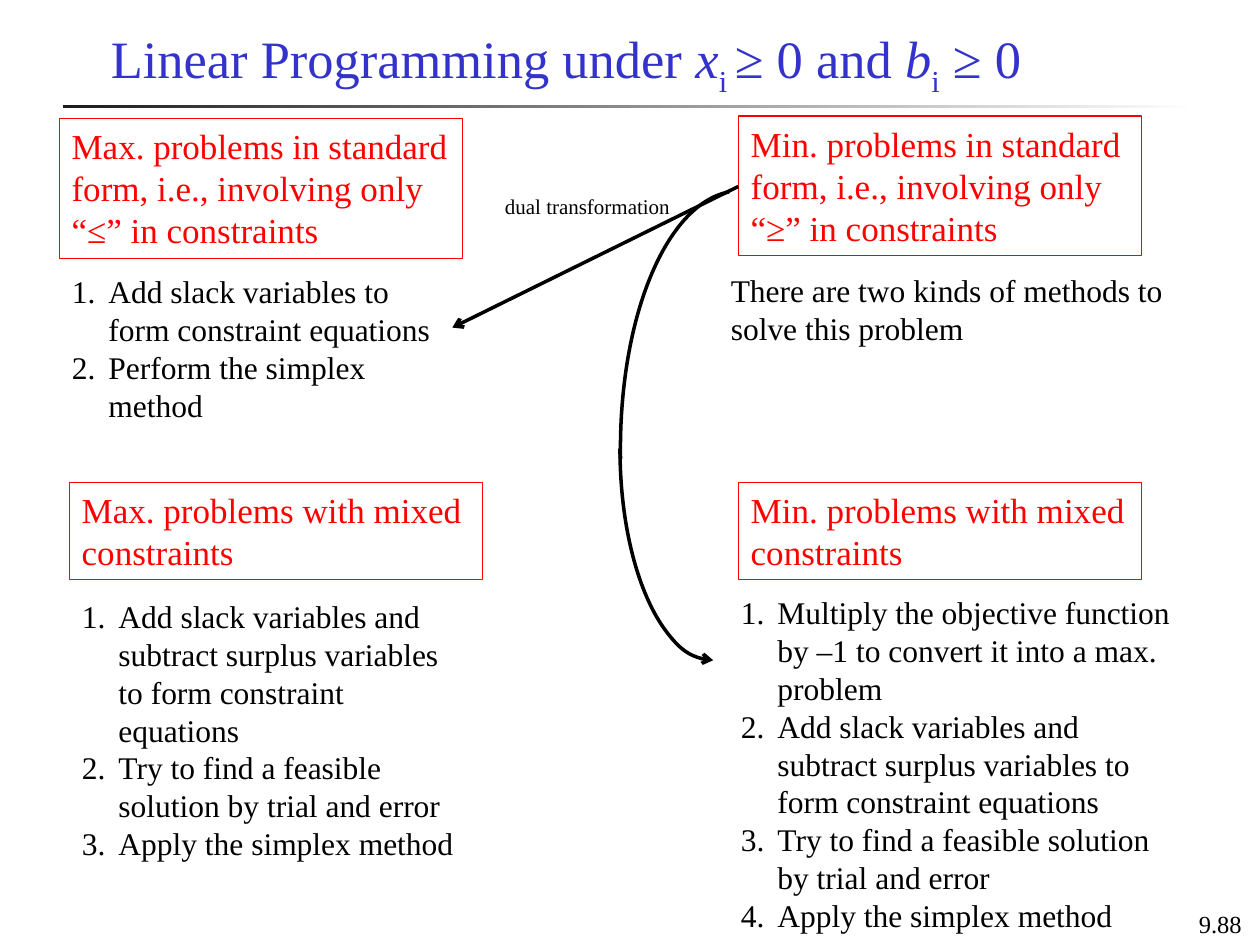
"""Build the linear programming overview slide."""
from pptx import Presentation
from pptx import util as u
from pptx.dml.color import RGBColor
from pptx.enum import shapes, text
from pptx.oxml import ns, xmlchemy

BLACK = RGBColor(0x00, 0x00, 0x00)
RED = RGBColor(0xFF, 0x00, 0x00)
BLUE = RGBColor(0x33, 0x33, 0xCC)
CHARCOAL = RGBColor(0x1C, 0x1C, 0x1C)
WHITE = RGBColor(0xFF, 0xFF, 0xFF)
FONT = "Times New Roman"

TITLE = [
    ("Linear Programming under ", ""), ("x", "italic"), ("i ", "sub"),
    ("≥ 0 and ", ""), ("b", "italic"), ("i", "sub"), (" ≥ 0", ""),
]
HEADINGS = [
    ("Max. problems in standard form, i.e., involving only “≤” in constraints",
     (0.47, 0.94, 3.2, 1.11)),
    ("Min. problems in standard form, i.e., involving only “≥” in constraints",
     (5.86, 0.92, 3.2, 1.11)),
    ("Max. problems with mixed constraints", (0.55, 3.83, 3.28, 0.77)),
    ("Min. problems with mixed constraints", (5.86, 3.83, 3.2, 0.77)),
]
SLACK = "Add slack variables and subtract surplus variables to form constraint equations"
TRIAL = "Try to find a feasible solution by trial and error"
SIMPLEX = "Apply the simplex method"
BODIES = [
    (["Add slack variables to form constraint equations",
      "Perform the simplex method"], (0.47, 2.11, 3.05, 1.31)),
    (["There are two kinds of methods to solve this problem"], (5.7, 2.1, 3.67, 0.71)),
    ([SLACK, TRIAL, SIMPLEX], (0.55, 4.69, 3.28, 2.22)),
    (["Multiply the objective function by –1 to convert it into a max. problem",
      SLACK, TRIAL, SIMPLEX], (5.78, 4.66, 3.67, 2.83)),
]
LABELS = [
    ("dual transformation", (3.91, 1.49, 1.64, 0.3), 12,
     text.PP_ALIGN.LEFT, text.MSO_ANCHOR.TOP),
    ("9.88", (9.29, 7, 0.79, 0.5), 14, text.PP_ALIGN.CENTER, text.MSO_ANCHOR.BOTTOM),
]
ARCS = [
    ((3.79, 2.65, 4.22, 1.95), 269, (162, 214.75), None),
    ((4.92, 1.88, 1.48, 3.36), 180, (162, 0), "a:headEnd"),
]


def inches(values):
    return [u.Inches(v) for v in values]


def assign(obj, **values):
    for name, value in values.items():
        setattr(obj, name, value)


def place(sp, box):
    assign(sp, **dict(zip(("left", "top", "width", "height"), inches(box))))


def add_child(parent, tag, **attrs):
    child = xmlchemy.OxmlElement(tag)
    for name, value in attrs.items():
        child.set(name, value)
    parent.append(child)


def write(sp, paragraphs, size, color, align=text.PP_ALIGN.LEFT,
          anchor=text.MSO_ANCHOR.TOP):
    tf = sp.text_frame
    assign(tf, word_wrap=True, auto_size=text.MSO_AUTO_SIZE.NONE, vertical_anchor=anchor)
    for n, runs in enumerate(paragraphs):
        p = tf.add_paragraph() if n else tf.paragraphs[0]
        assign(p, alignment=align, space_before=u.Pt(0), line_spacing=1.0)
        for words, style in runs:
            r = p.add_run()
            r.text = words
            assign(r.font, name=FONT, size=u.Pt(size), bold=False, italic=style == "italic")
            r.font.color.rgb = color
            if style == "sub":
                r.font._element.set("baseline", "-25000")
    return tf


def number(tf):
    numbered = len(tf.paragraphs) > 1
    for p in tf.paragraphs:
        pPr = p._p.get_or_add_pPr()
        pPr.set("marL", str(u.Inches(0.29 if numbered else 0)))
        pPr.set("indent", str(u.Inches(-0.29 if numbered else 0)))
        if numbered:
            add_child(pPr, "a:buFont", typeface="+mj-lt")
            add_child(pPr, "a:buAutoNum", type="arabicPeriod")
        else:
            add_child(pPr, "a:buNone")


def stroke(sp, color, width, arrow=None):
    sp.line.color.rgb = color
    sp.line.width = u.Pt(width)
    if arrow:
        add_child(sp._element.spPr.find(ns.qn("a:ln")), arrow, type="arrow")


def add_shape(s, kind, box):
    sp = s.shapes.add_shape(kind, *inches(box))
    sp.shadow.inherit = False
    return sp


def main():
    prs = Presentation()
    prs.slide_width, prs.slide_height = inches((10, 7.5))
    s = prs.slides.add_slide(prs.slide_layouts.get_by_name("Comparison"))

    bar = add_shape(s, shapes.MSO_SHAPE.RECTANGLE, (0.5, 0.83, 9, 0.03))
    bar.line.fill.background()
    bar.fill.gradient()
    bar.fill.gradient_angle = 0
    for stop, color in zip(bar.fill.gradient_stops, (CHARCOAL, WHITE)):
        stop.color.rgb = color

    title, *bodies = s.placeholders
    place(title, (0.78, 0.16, 7.66, 0.61))
    write(title, [TITLE], 30, BLUE)
    for sp, (items, box) in zip(bodies, BODIES):
        place(sp, box)
        number(write(sp, [[(item, "")] for item in items], 18, BLACK))

    for words, box in HEADINGS:
        sp = add_shape(s, shapes.MSO_SHAPE.RECTANGLE, box)
        sp.fill.background()
        stroke(sp, RED, 0.75)
        write(sp, [[(words, "")]], 20, RED)

    for words, box, size, align, anchor in LABELS:
        sp = s.shapes.add_textbox(*inches(box))
        write(sp, [[(words, "")]], size, BLACK, align, anchor)

    dual = s.shapes.add_connector(shapes.MSO_CONNECTOR.STRAIGHT,
                                  *inches((5.86, 1.48, 3.59, 2.6)))
    stroke(dual, BLACK, 2, "a:tailEnd")
    add_child(dual._element.spPr, "a:effectLst")
    for box, rotation, angles, arrow in ARCS:
        arc = add_shape(s, shapes.MSO_SHAPE.ARC, box)
        arc.rotation = rotation
        arc.adjustments[0], arc.adjustments[1] = angles
        arc.fill.background()
        stroke(arc, BLACK, 2, arrow)

    prs.save("out.pptx")


if __name__ == "__main__":
    main()
